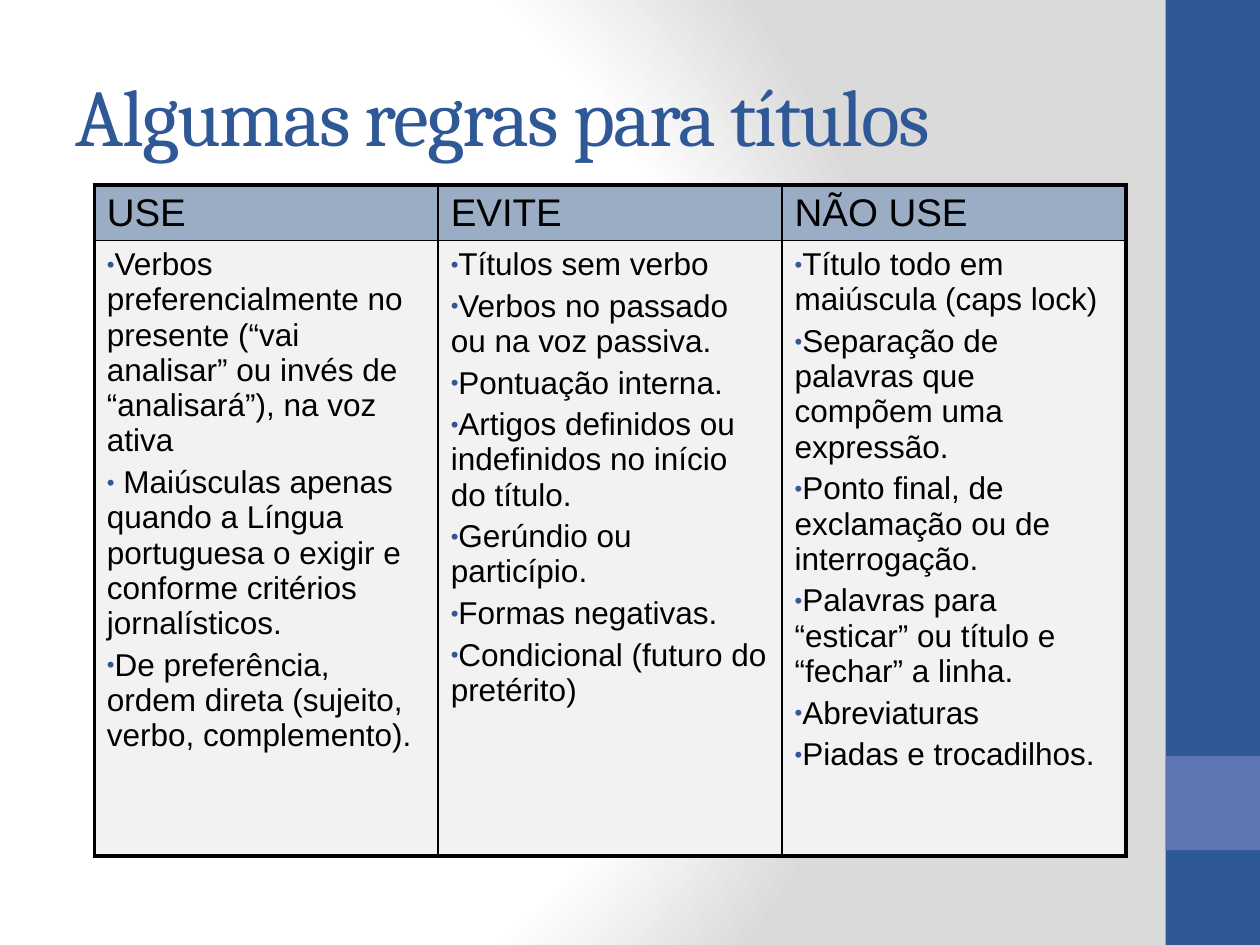
"""Build a slide with a three-column table of rules for headlines."""
import pptx
import pptx.dml.color
import pptx.enum.shapes
import pptx.enum.text
import pptx.oxml
import pptx.oxml.ns
import pptx.util

Cm = pptx.util.Cm
Pt = pptx.util.Pt
RGB = pptx.dml.color.RGBColor

NAVY = RGB(0x2F, 0x58, 0x97)
VIOLET = RGB(0x60, 0x76, 0xB4)
STEEL = RGB(0x9B, 0xAD, 0xC4)
PALE = RGB(0xF2, 0xF2, 0xF2)
BLACK = RGB(0, 0, 0)
WHITE = RGB(0xFF, 0xFF, 0xFF)
GREY = RGB(0xDA, 0xDA, 0xDA)

RULES = {
    "USE": [
        "Verbos preferencialmente no presente (“vai analisar” ou invés de “analisará”), na voz ativa",
        " Maiúsculas apenas quando a Língua portuguesa o exigir e conforme critérios jornalísticos.",
        "De preferência, ordem direta (sujeito, verbo, complemento).",
    ],
    "EVITE": [
        "Títulos sem verbo",
        "Verbos no passado ou na voz passiva.",
        "Pontuação interna.",
        "Artigos definidos ou indefinidos no início do título.",
        "Gerúndio ou particípio.",
        "Formas negativas.",
        "Condicional (futuro do pretérito)",
    ],
    "NÃO USE": [
        "Título todo em maiúscula (caps lock)",
        "Separação de palavras que compõem uma expressão.",
        "Ponto final, de exclamação ou de interrogação.",
        "Palavras para “esticar” ou título e “fechar” a linha.",
        "Abreviaturas",
        "Piadas e trocadilhos.",
    ],
}


def node(tag, body):
    """Parse one element with the drawing namespaces declared."""
    spaces = pptx.oxml.ns.nsdecls("a", "p")
    return pptx.oxml.parse_xml(f"<{tag} {spaces}{body}")


class Deck:
    """Hold the style and the current slide."""

    def __init__(self, show):
        self.head, self.font = "Cambria", "Arial"
        self.slide = show.slides.add_slide(show.slide_layouts[5])

    def ground(self):
        """Fill the background with a circular gradient."""
        stops = "".join(
            f'<a:gs pos="{pos}"><a:srgbClr val="{tint}"/></a:gs>'
            for pos, tint in ((0, WHITE), (75000, WHITE), (100000, GREY)))
        fill = node("p:bg", f"""><p:bgPr><a:gradFill rotWithShape="1">
            <a:gsLst>{stops}</a:gsLst><a:path path="circle">
            <a:fillToRect l="20000" t="50000" r="100000" b="50000"/></a:path>
            </a:gradFill><a:effectLst/></p:bgPr></p:bg>""")
        self.slide.shapes.element.getparent().insert(0, fill)

    def bar(self, top, high, tint):
        """Add a plain block at the right edge."""
        kind = pptx.enum.shapes.MSO_SHAPE.RECTANGLE
        shape = self.slide.shapes.add_shape(kind, Cm(23.5), Cm(top), Cm(1.9), Cm(high))
        shape.shadow.inherit = False
        shape.fill.solid()
        shape.fill.fore_color.rgb = tint
        shape.line.fill.background()

    def title(self, text):
        """Place and format the title."""
        shape = self.slide.shapes.title
        shape.left, shape.top, shape.width, shape.height = map(Cm, (1.27, 0.33, 20.95, 3.94))
        frame = shape.text_frame
        frame.text = text
        frame.auto_size = pptx.enum.text.MSO_AUTO_SIZE.NONE
        frame.vertical_anchor = pptx.enum.text.MSO_ANCHOR.MIDDLE
        para = frame.paragraphs[0]
        para.alignment = pptx.enum.text.PP_ALIGN.LEFT
        self.style(para, 46, NAVY, self.head)
        para.runs[0].font._element.set("spc", "-100")

    def style(self, para, size, tint, face):
        """Format the runs of a paragraph."""
        for run in para.runs:
            run.font.name, run.font.size = face, Pt(size)
            run.font.bold = False
            run.font.color.rgb = tint

    def bullet(self, para):
        """Give a paragraph a small coloured bullet."""
        props = para._p.get_or_add_pPr()
        props.append(node("a:buClr", f'><a:srgbClr val="{NAVY}"/></a:buClr>'))
        props.append(node("a:buSzPct", ' val="70000"/>'))
        props.append(node("a:buFont", f' typeface="{self.font}"/>'))
        props.append(node("a:buChar", ' char="•"/>'))

    def cell(self, cell, lines, size, tint, thick):
        """Write, fill and frame one cell."""
        cell.text_frame.text = "\n".join(lines)
        for para in cell.text_frame.paragraphs:
            para.space_before = Pt(0.2 * size)
            self.style(para, size, BLACK, self.font)
        cell.fill.solid()
        cell.fill.fore_color.rgb = tint
        for spot, side in enumerate("LRTB"):
            width = Pt(2.25 if side in thick else 1)
            cell._tc.get_or_add_tcPr().insert(spot, node(
                f"a:ln{side}", f' w="{width}"><a:solidFill><a:srgbClr val="{BLACK}"/>'
                f"</a:solidFill></a:ln{side}>"))

    def table(self, rules):
        """Add the table, one column for each group of rules."""
        count = len(rules)
        grid = self.slide.shapes.add_table(
            2, count, Cm(1.9), Cm(3.73), Cm(20.8), Cm(13.5)).table
        grid.first_row = grid.horz_banding = False
        grid.rows[0].height, grid.rows[1].height = Cm(1.11), Cm(12.4)
        for col, (name, lines) in enumerate(rules.items()):
            edge = "L" * (col == 0) + "R" * (col == count - 1)
            self.cell(grid.cell(0, col), [name], 22, STEEL, edge + "T")
            body = grid.cell(1, col)
            self.cell(body, lines, 18, PALE, edge + "B")
            for para in body.text_frame.paragraphs:
                self.bullet(para)


def main():
    """Build and save the slide."""
    show = pptx.Presentation()
    show.slide_width, show.slide_height = Cm(25.4), Cm(19.05)
    deck = Deck(show)
    deck.ground()
    deck.bar(0, 19.05, NAVY)
    deck.bar(15.24, 1.9, VIOLET)
    deck.title("Algumas regras para títulos")
    deck.table(RULES)
    show.save("out.pptx")


if __name__ == "__main__":
    main()
